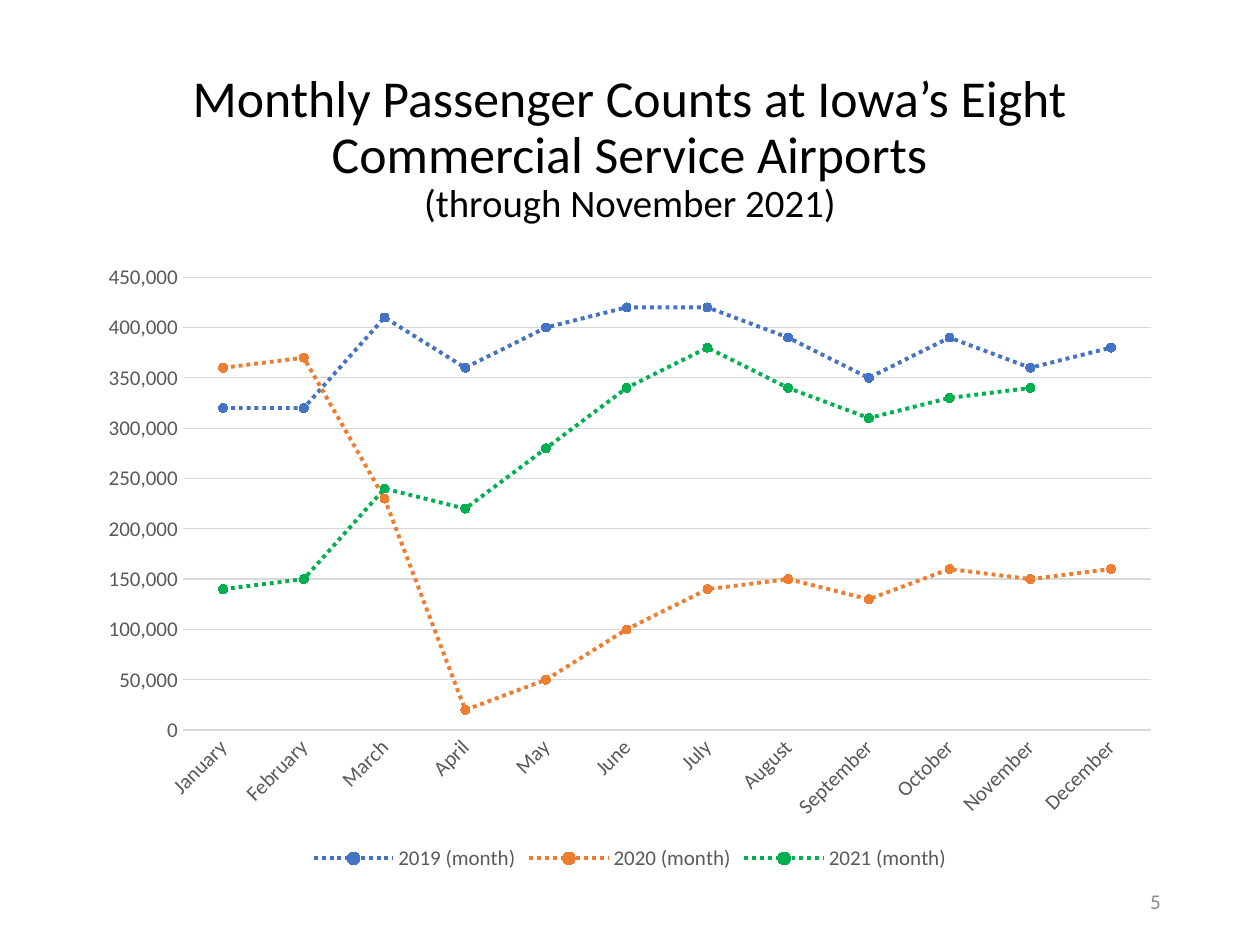
from pptx import Presentation, util as u
from pptx.chart.data import CategoryChartData
from pptx.dml.color import RGBColor
from pptx.enum import chart as ch, dml, text

WIDTH, HEIGHT = 10, 7.5
LEFT, SPAN = 0.069, 0.862
FONT = "Calibri"
COLORS = {
    "title": "000000", "label": "595959", "grid": "D9D9D9", "number": "8C8C8C",
    "2019": "4472C4", "2020": "ED7D31", "2021": "00B050",
}
MONTHS = ["January", "February", "March", "April", "May", "June", "July",
          "August", "September", "October", "November", "December"]
PASSENGERS = {
    "2019": [320000, 320000, 410000, 360000, 400000, 420000,
             420000, 390000, 350000, 390000, 360000, 380000],
    "2020": [360000, 370000, 230000, 20000, 50000, 100000,
             140000, 150000, 130000, 160000, 150000, 160000],
    "2021": [140000, 150000, 240000, 220000, 280000, 340000,
             380000, 340000, 310000, 330000, 340000, None],
}


def rgb(name):
    return RGBColor.from_string(COLORS[name])


def box(left, top, width, height):
    return (u.Inches(left * WIDTH), u.Inches(top * HEIGHT),
            u.Inches(width * WIDTH), u.Inches(height * HEIGHT))


def style_font(font, size, color):
    font.name = FONT
    font.size = u.Pt(size)
    font.color.rgb = rgb(color)


def style_line(line, color, width):
    line.color.rgb = rgb(color)
    line.width = u.Pt(width)


def add_text(slide, place, lines, color, align, anchor, spacing=1.0):
    tf = slide.shapes.add_textbox(*box(*place)).text_frame
    tf.word_wrap = True
    tf.vertical_anchor = anchor
    tf.text = "\n".join(line for line, _ in lines)
    for p, (_, size) in zip(tf.paragraphs, lines):
        p.alignment = align
        p.line_spacing = spacing
        style_font(p.runs[0].font, size, color)


def style_axes(chart):
    months, counts = chart.category_axis, chart.value_axis
    for axis in (months, counts):
        axis.major_tick_mark = axis.minor_tick_mark = ch.XL_TICK_MARK.NONE
        style_font(axis.tick_labels.font, 12, "label")
    style_line(months.format.line, "grid", 0.75)
    months._element.txPr.bodyPr.set("rot", "-2700000")
    counts.minimum_scale, counts.maximum_scale, counts.major_unit = 0, 450000, 50000
    counts.format.line.fill.background()
    counts.tick_labels.number_format = "#,##0"
    counts.tick_labels.number_format_is_linked = False
    style_line(counts.major_gridlines.format.line, "grid", 0.75)


def style_series(series, color):
    series.smooth = False
    style_line(series.format.line, color, 2.25)
    series.format.line.dash_style = dml.MSO_LINE.ROUND_DOT
    series.marker.style = ch.XL_MARKER_STYLE.CIRCLE
    series.marker.size = 5
    series.marker.format.fill.solid()
    series.marker.format.fill.fore_color.rgb = rgb(color)
    style_line(series.marker.format.line, color, 0.75)


def add_line_chart(slide, place):
    data = CategoryChartData(number_format="#,##0")
    data.categories = MONTHS
    for year, values in PASSENGERS.items():
        data.add_series(f"{year} (month)", values)
    chart = slide.shapes.add_chart(
        ch.XL_CHART_TYPE.LINE_MARKERS, *box(*place), data).chart
    chart.has_title = False
    style_font(chart.font, 10, "title")
    chart.has_legend = True
    chart.legend.position = ch.XL_LEGEND_POSITION.BOTTOM
    chart.legend.include_in_layout = False
    style_font(chart.legend.font, 12, "label")
    style_axes(chart)
    plot = chart.plots[0]
    plot.vary_by_categories = False
    for series, year in zip(plot.series, PASSENGERS):
        style_series(series, year)


def main():
    prs = Presentation()
    prs.slide_width, prs.slide_height = u.Inches(WIDTH), u.Inches(HEIGHT)
    slide = prs.slides.add_slide(prs.slide_layouts[6])
    add_line_chart(slide, (LEFT, 0.267, SPAN, 0.66))
    add_text(slide, (0.706, 0.927, 0.225, 0.053), [("5", 12)], "number",
             text.PP_ALIGN.RIGHT, text.MSO_ANCHOR.MIDDLE)
    title = [("Monthly Passenger Counts at Iowa’s Eight Commercial Service Airports", 29.6),
             ("(through November 2021)", 22.2)]
    add_text(slide, (LEFT, 0.053, SPAN, 0.193), title, "title",
             text.PP_ALIGN.CENTER, text.MSO_ANCHOR.BOTTOM, 0.9)
    prs.save("out.pptx")


if __name__ == "__main__":
    main()
